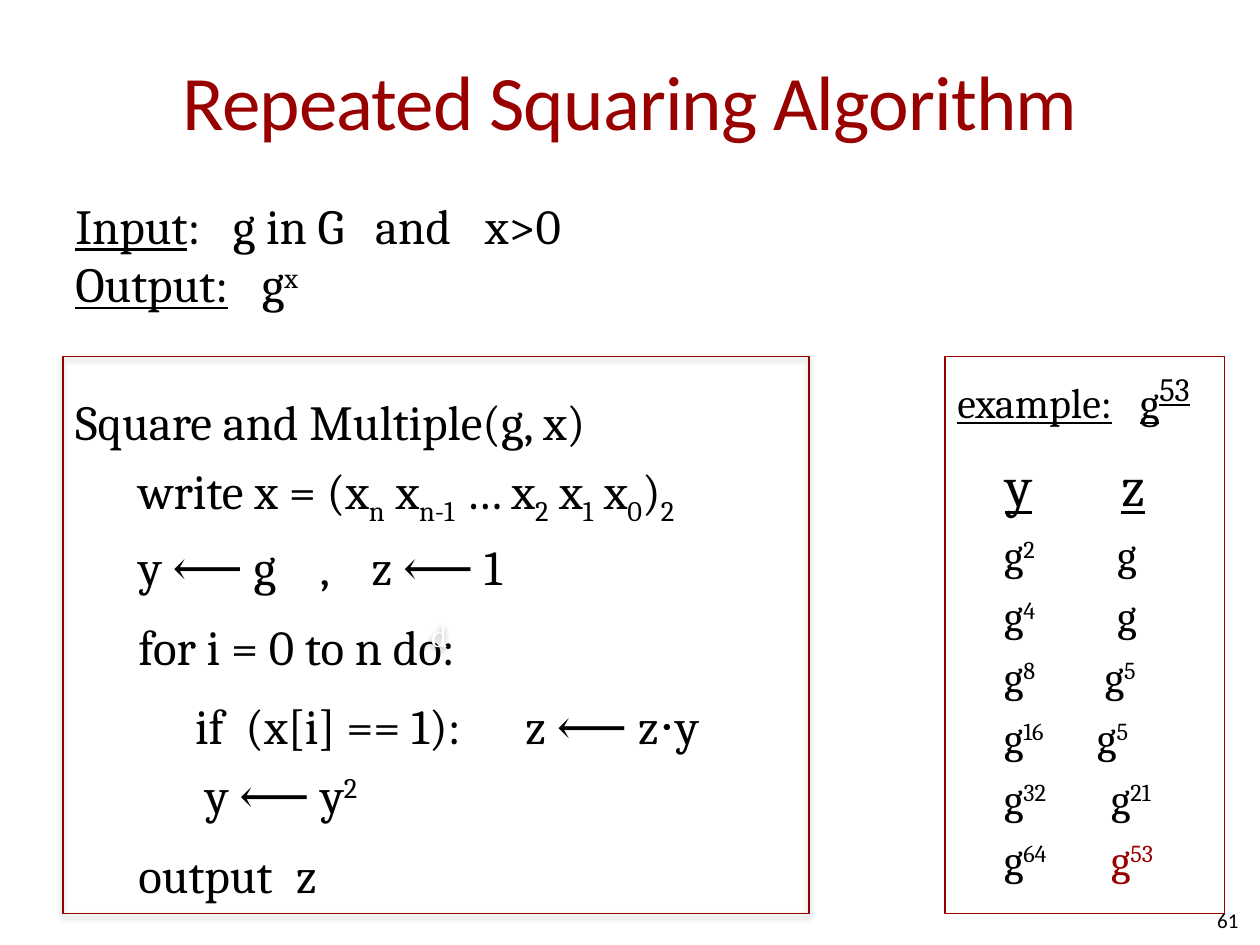
from lxml.etree import SubElement
from pptx import Presentation
from pptx.dml.color import RGBColor
from pptx.enum.shapes import MSO_SHAPE
from pptx.enum.text import MSO_ANCHOR, PP_ALIGN
from pptx.oxml.ns import qn
from pptx.util import Inches, Pt

RED, BLACK, WHITE = "990000", "000000", "FFFFFF"
BASELINES = {"^": "30000", "_": "-25000"}


def color(value):
    return RGBColor.from_string(value)


def write(para, markup, size, before=0, stops=(), font="Cambria", ink=BLACK):
    """Spans are parted by |; a leading ^ raises, _ lowers, ~ underlines, ! reddens."""
    para.space_before = Pt(before)
    if stops:
        tabs = SubElement(para._p.get_or_add_pPr(), qn("a:tabLst"))
        for stop in stops:
            SubElement(tabs, qn("a:tab"), pos=str(Inches(stop)), algn="l")
    para.font.size, para.font.name = Pt(size), font
    para.font.color.rgb = color(ink)
    for part in markup.split("|"):
        span = para.add_run()
        span.text = part.lstrip("^_~!")
        marks = part[:len(part) - len(span.text)]
        for mark in marks:
            if mark in BASELINES:
                span.font._element.set("baseline", BASELINES[mark])
            elif mark == "~":
                span.font.underline = True
            else:
                span.font.color.rgb = color(RED)


deck = Presentation()
deck.slide_width, deck.slide_height = Inches(10), Inches(7.5)
page = deck.slides.add_slide(deck.slide_layouts[5])
margin, panel_top, panel_height = Inches(0.5), Inches(2.83), Inches(4.42)

# Title
title = page.shapes.title
title.left, title.top = margin, Inches(0.17)
title.width, title.height = deck.slide_width - 2 * margin, Inches(1.25)
title.text_frame.vertical_anchor = MSO_ANCHOR.MIDDLE
para = title.text_frame.paragraphs[0]
para.alignment = PP_ALIGN.CENTER
write(para, "Repeated Squaring Algorithm", 44, font="Calibri", ink=RED)
para.runs[0].font._element.set("spc", "-50")

# Input, output and algorithm: markup, space before, tab stops
algorithm = [
    ("~Input|:\tg in G\tand\tx>0", 0, (1.25, 2.38, 3.25)),
    ("~Output:|\tg|^x", 0, (1.48,)),
    ("Square and Multiple(g, x)", 45, ()),
    ("\twrite x = (x|_n| x|_n-1| … x|_2| x|_1| x|_0|)|_2", 5.6, (0.5,)),
    ("\ty ⟵ g\t,\tz ⟵ 1", 5.6, (0.5, 1.94, 2.35)),
    ("\tfor i = 0 to n do:", 11.8, (0.5,)),
    ("\tif\t(x[i] == 1):\tz ⟵ z⋅y", 11.8, (0.95, 1.35, 3.57)),
    ("\ty ⟵ y|^2", 5.6, (1.03,)),
    ("\toutput\tz", 11.8, (0.5, 1.75)),
]
body = page.shapes.add_textbox(margin, Inches(1.5), title.width, Inches(5.2))
frame = body.text_frame
frame.word_wrap = True
for row, (markup, before, stops) in enumerate(algorithm):
    para = frame.add_paragraph() if row else frame.paragraphs[0]
    write(para, markup, 28, before, stops)

# Framed panels
panels = []
for left, width in ((0.5, 5.92), (7.5, 2.22)):
    panel = page.shapes.add_shape(MSO_SHAPE.RECTANGLE, Inches(left), panel_top,
                                  Inches(width), panel_height)
    panel.shadow.inherit = False
    panel.fill.background()
    panel.line.color.rgb = color(RED)
    panel.line.width = Pt(0.75)
    panels.append(panel)
algorithm_panel, example_panel = panels

# Soft shadow and faint letter of the algorithm panel
effects = algorithm_panel._element.spPr.find(qn("a:effectLst"))
shadow = SubElement(effects, qn("a:outerShdw"), blurRad=str(Pt(3.1)),
                    dist=str(Pt(1.8)), dir="5400000", rotWithShape="0")
shade = SubElement(shadow, qn("a:srgbClr"), val=BLACK)
SubElement(shade, qn("a:alpha"), val="35000")
para = algorithm_panel.text_frame.paragraphs[0]
para.alignment = PP_ALIGN.CENTER
write(para, " d", 18, ink=WHITE)

# Worked example: successive values of y and z, with the place of z
example = [("2", "g", 1.27), ("4", "g", 1.27), ("8", "g|^5", 1.17),
           ("16", "g|^5", 1.11), ("32", "g|^21", 1.22), ("64", "!g|!^53", 1.22)]
frame = example_panel.text_frame
frame.vertical_anchor = MSO_ANCHOR.TOP
heading = frame.paragraphs[0]
write(heading, "~example:\tg|~^53", 24, stops=(1.45,))
heading.runs[-1].font.size = Pt(32)
write(frame.add_paragraph(), "\t|~y|\t|~z", 32, 12, (0.38, 1.3))
for power, result, place in example:
    write(frame.add_paragraph(), f"\tg|^{power}|\t|{result}", 24, 6, (0.37, place))
for para in frame.paragraphs:
    para.alignment = PP_ALIGN.LEFT

# Page number
number = page.shapes.add_textbox(Inches(7.5), Inches(7.1), Inches(2.33), Inches(0.4))
frame = number.text_frame
frame.margin_left = frame.margin_right = frame.margin_top = frame.margin_bottom = 0
frame.vertical_anchor = MSO_ANCHOR.MIDDLE
frame.paragraphs[0].alignment = PP_ALIGN.RIGHT
write(frame.paragraphs[0], "61", 12, font="Calibri")

deck.save("out.pptx")
